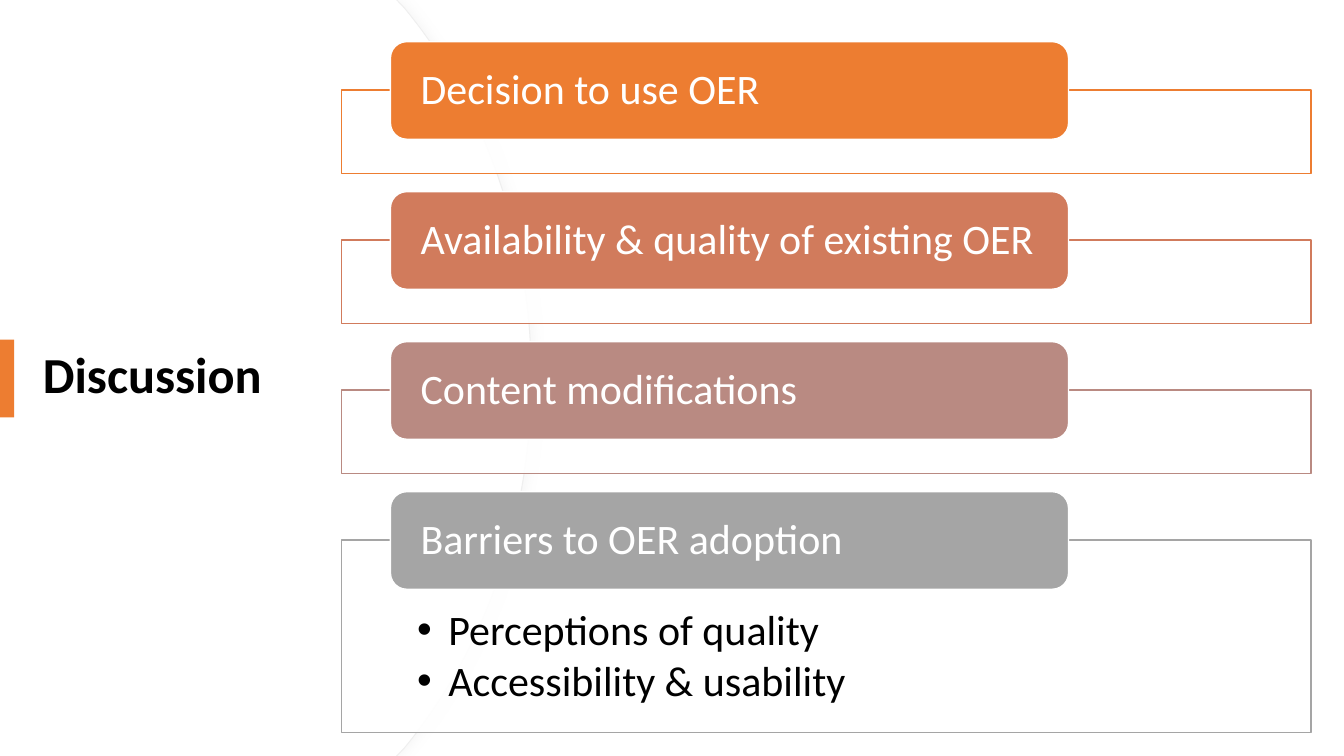
from lxml import etree
from pptx import Presentation
from pptx import util as u
from pptx.dml.color import RGBColor
from pptx.enum import shapes, text
from pptx.oxml.ns import qn

Cm = u.Cm


def paint(sp, fill, line=None, width=1):
    """Set a flat fill and an optional outline, without a shadow."""
    sp.shadow.inherit = False
    sp.fill.solid()
    sp.fill.fore_color.rgb = RGBColor.from_string(fill)
    if line:
        sp.line.color.rgb = RGBColor.from_string(line)
        sp.line.width = u.Pt(width)
    else:
        sp.line.fill.background()


def write(sp, *lines, size=30, color="FFFFFF", bold=False, inset=(0.64, 0),
          anchor=text.MSO_ANCHOR.MIDDLE, after=0, bullet=None):
    """Fill a shape with paragraphs; inset is (sides, top) in cm, bullet the hanging indent."""
    tf = sp.text_frame
    tf.word_wrap = True
    tf.auto_size = text.MSO_AUTO_SIZE.NONE
    tf.vertical_anchor = anchor
    tf.margin_left = tf.margin_right = Cm(inset[0])
    tf.margin_top, tf.margin_bottom = Cm(inset[1]), 0
    for i, line in enumerate(lines):
        p = tf.add_paragraph() if i else tf.paragraphs[0]
        p.alignment = text.PP_ALIGN.LEFT
        p.line_spacing = 0.9
        p.space_after = u.Pt(after)
        r = p.add_run()
        r.text = line
        r.font.name, r.font.size, r.font.bold = "Calibri", u.Pt(size), bold
        r.font.color.rgb = RGBColor.from_string(color)
        if bullet:
            p.level = 1
            pPr = p._p.get_or_add_pPr()
            pPr.set("marL", str(Cm(bullet)))
            pPr.set("indent", str(-Cm(bullet)))
            etree.SubElement(pPr, qn("a:buFont"), typeface="Arial")
            etree.SubElement(pPr, qn("a:buChar"), char="•")


prs = Presentation()
prs.slide_width, prs.slide_height = Cm(33.87), Cm(19.05)
s = prs.slides.add_slide(prs.slide_layouts[5])
title = s.shapes.title

# Curved left panel: a shadowed edge with a plain layer on top
upper = [(10, 0), (10.19, 0.2), (12.17, 2.59), (13.39, 5.89)]
lower = [(x, 19.05 - y) for x, y in reversed(upper)]
edge = upper + [(13.39, 9.53)] + lower + [(0, 19.05)]

for shift, line in ((0, "EFEFEF"), (0.03, None)):
    fb = s.shapes.build_freeform(0, 0)
    fb.add_line_segments([(Cm(max(x - shift, 0)), Cm(y)) for x, y in edge], close=True)
    panel = fb.convert_to_shape()
    paint(panel, "FFFFFF", line, 0.75)
    # Points 2-4 and 5-7 are the controls and ends of the two curves
    segments = list(panel._element.spPr.iter(qn("a:lnTo")))
    for first in (2, 5):
        curve = segments[first]
        curve.tag = qn("a:cubicBezTo")
        for segment in segments[first + 1:first + 3]:
            curve.append(segment[0])
            segment.getparent().remove(segment)
    if line:
        effects = panel._element.spPr.find(qn("a:effectLst"))
        shadow = etree.SubElement(effects, qn("a:outerShdw"), blurRad=str(u.Pt(7)),
                                  dist=str(u.Pt(3)), dir="0", algn="l", rotWithShape="0")
        tone = etree.SubElement(shadow, qn("a:srgbClr"), val="D9D9D9")
        etree.SubElement(tone, qn("a:alpha"), val="20000")

# Title, brought in front of the panel
s.shapes._spTree.append(title._element)
title.left, title.top, title.width, title.height = Cm(0.83), Cm(3.23), Cm(6.27), Cm(12.57)
write(title, "Discussion", size=36, color="000000", bold=True, inset=(0.25, 0))

accent = s.shapes.add_shape(shapes.MSO_SHAPE.RECTANGLE, 0, Cm(8.56), Cm(0.36), Cm(1.96))
paint(accent, "ED7D31")

# Topics: a label overlapping the top of an outlined frame
topics = [
    ("Decision to use OER", "ED7D31", []),
    ("Availability & quality of existing OER", "D17B5C", []),
    ("Content modifications", "B98A82", []),
    ("Barriers to OER adoption", "A5A5A5",
     ["Perceptions of quality", "Accessibility & usability"]),
]
for i, (label, color, points) in enumerate(topics):
    top = 1.05 + 3.78 * i
    frame = s.shapes.add_shape(shapes.MSO_SHAPE.RECTANGLE, Cm(8.61), Cm(top + 1.22),
                               Cm(24.43), Cm(4.85 if points else 2.11))
    paint(frame, "FFFFFF", color)
    fill = frame._element.spPr.find(qn("a:solidFill"))
    etree.SubElement(fill[0], qn("a:alpha"), val="90000")
    if points:
        write(frame, *points, color="000000", inset=(1.9, 1.74),
              anchor=text.MSO_ANCHOR.TOP, after=4, bullet=0.79)
    card = s.shapes.add_shape(shapes.MSO_SHAPE.ROUNDED_RECTANGLE, Cm(9.84), Cm(top),
                              Cm(17.09), Cm(2.46))
    paint(card, color, "FFFFFF")
    write(card, label)

prs.save("out.pptx")
